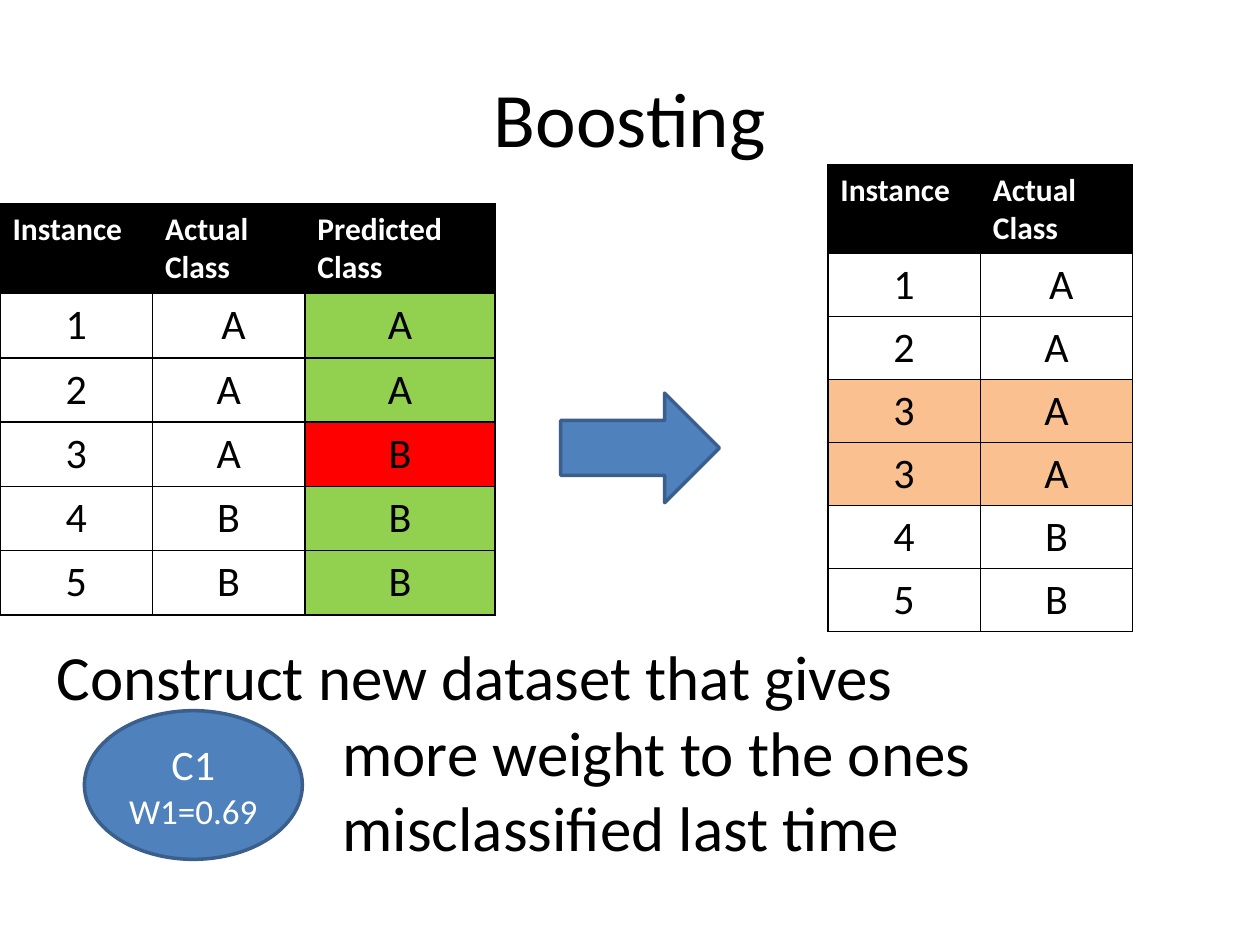
from lxml import etree
from pptx import Presentation, util as u
from pptx.dml.color import RGBColor
from pptx.enum import shapes, text
from pptx.oxml import ns

FONT = "Calibri"
BLACK, WHITE, BLUE, NAVY = "000000", "FFFFFF", "4F81BD", "3A5F8C"
GREEN, RED, ORANGE = "92D050", "FF0000", "FAC090"
HEADER_HEIGHT, COLUMN_WIDTH = 0.7, 1.21
INDENT = 2.27


def color(value):
    """Turn a hex string into a colour."""
    return RGBColor.from_string(value)


def inches(*lengths):
    """Convert several lengths to inches."""
    return [u.Inches(length) for length in lengths]


def style(paragraph, size, hex_color, align, bold=False):
    """Set the font and alignment of a paragraph."""
    font = paragraph.font
    font.name, font.size, font.bold = FONT, u.Pt(size), bold
    font.color.rgb = color(hex_color)
    paragraph.alignment = align


def add_borders(cell):
    """Draw a thin black line on each side of a cell."""
    properties = cell._tc.get_or_add_tcPr()
    for side in ("a:lnL", "a:lnR", "a:lnT", "a:lnB"):
        line = etree.SubElement(properties, ns.qn(side), w=str(u.Pt(1)))
        fill = etree.SubElement(line, ns.qn("a:solidFill"))
        etree.SubElement(fill, ns.qn("a:srgbClr"), val=BLACK)


def add_table(slide, left, top, widths, row_height, rows, fills):
    """Add a table with a black header and the given cells highlighted."""
    height = HEADER_HEIGHT + row_height * (len(rows) - 1)
    frame = slide.shapes.add_table(
        len(rows), len(widths), *inches(left, top, sum(widths), height))
    table = frame.table
    for column, width in zip(table.columns, widths):
        column.width = u.Inches(width)
    for r, values in enumerate(rows):
        header = r == 0
        table.rows[r].height = u.Inches(HEADER_HEIGHT if header else row_height)
        for c, value in enumerate(values):
            cell = table.cell(r, c)
            cell.text = value
            add_borders(cell)
            cell.fill.solid()
            cell.fill.fore_color.rgb = color(
                BLACK if header else fills.get((r, c), WHITE))
            paragraph = cell.text_frame.paragraphs[0]
            if header:
                style(paragraph, 18, WHITE, text.PP_ALIGN.LEFT, bold=True)
            else:
                style(paragraph, 24, BLACK, text.PP_ALIGN.CENTER)


def add_shape(slide, kind, box, lines=()):
    """Add a blue outlined shape with centred lines of (text, size)."""
    shape = slide.shapes.add_shape(kind, *inches(*box))
    shape.shadow.inherit = False
    shape.fill.solid()
    shape.fill.fore_color.rgb = color(BLUE)
    shape.line.color.rgb = color(NAVY)
    shape.line.width = u.Pt(2)
    frame = shape.text_frame
    frame.vertical_anchor = text.MSO_ANCHOR.MIDDLE
    for i, (line, size) in enumerate(lines):
        paragraph = frame.add_paragraph() if i else frame.paragraphs[0]
        paragraph.text = line
        style(paragraph, size, WHITE, text.PP_ALIGN.CENTER)


def add_note(slide, box, lines):
    """Add a text box whose lines after the first are indented."""
    frame = slide.shapes.add_textbox(*inches(*box)).text_frame
    frame.word_wrap = True
    for i, line in enumerate(lines):
        paragraph = frame.add_paragraph() if i else frame.paragraphs[0]
        paragraph.text = line
        style(paragraph, 36, BLACK, text.PP_ALIGN.LEFT)
        if i:
            paragraph._p.get_or_add_pPr().set("marL", str(u.Inches(INDENT)))


def set_title(slide, title):
    """Place and format the title."""
    shape = slide.shapes.title
    shape.left, shape.top, shape.width, shape.height = inches(0.5, 0.3, 9, 1.25)
    shape.text_frame.text = title
    shape.text_frame.vertical_anchor = text.MSO_ANCHOR.MIDDLE
    style(shape.text_frame.paragraphs[0], 44, BLACK, text.PP_ALIGN.CENTER)


def main():
    """Build the boosting slide."""
    presentation = Presentation()
    presentation.slide_width, presentation.slide_height = inches(10, 7.5)
    slide = presentation.slides.add_slide(presentation.slide_layouts[5])
    set_title(slide, "Boosting")

    header = ["Instance", "Actual Class", "Predicted Class"]
    results = [["1", " A", "A"], ["2", "A", "A"], ["3", "A", "B"],
               ["4", "B", "B"], ["5", "B", "B"]]
    marks = {(r, 2): GREEN if row[1].strip() == row[2] else RED
             for r, row in enumerate(results, 1)}
    add_table(slide, 0, 1.62, [COLUMN_WIDTH, COLUMN_WIDTH, 1.51], 0.51,
              [header] + results, marks)

    add_note(slide, (0.35, 5.01, 7.6, 1.92),
             ["Construct new dataset that gives", "more weight to the ones",
              "misclassified last time"])
    add_shape(slide, shapes.MSO_SHAPE.OVAL, (0.67, 5.64, 1.73, 1.18),
              [("C1", 24), ("W1=0.69", 20)])
    add_shape(slide, shapes.MSO_SHAPE.RIGHT_ARROW, (4.45, 3.12, 1.26, 0.87))

    reweighted = results[:3] + results[2:]
    repeated = {(r, c): ORANGE for r in (3, 4) for c in (0, 1)}
    add_table(slide, 6.57, 1.31, [COLUMN_WIDTH] * 2, 0.5,
              [row[:2] for row in [header] + reweighted], repeated)
    presentation.save("out.pptx")


if __name__ == "__main__":
    main()
